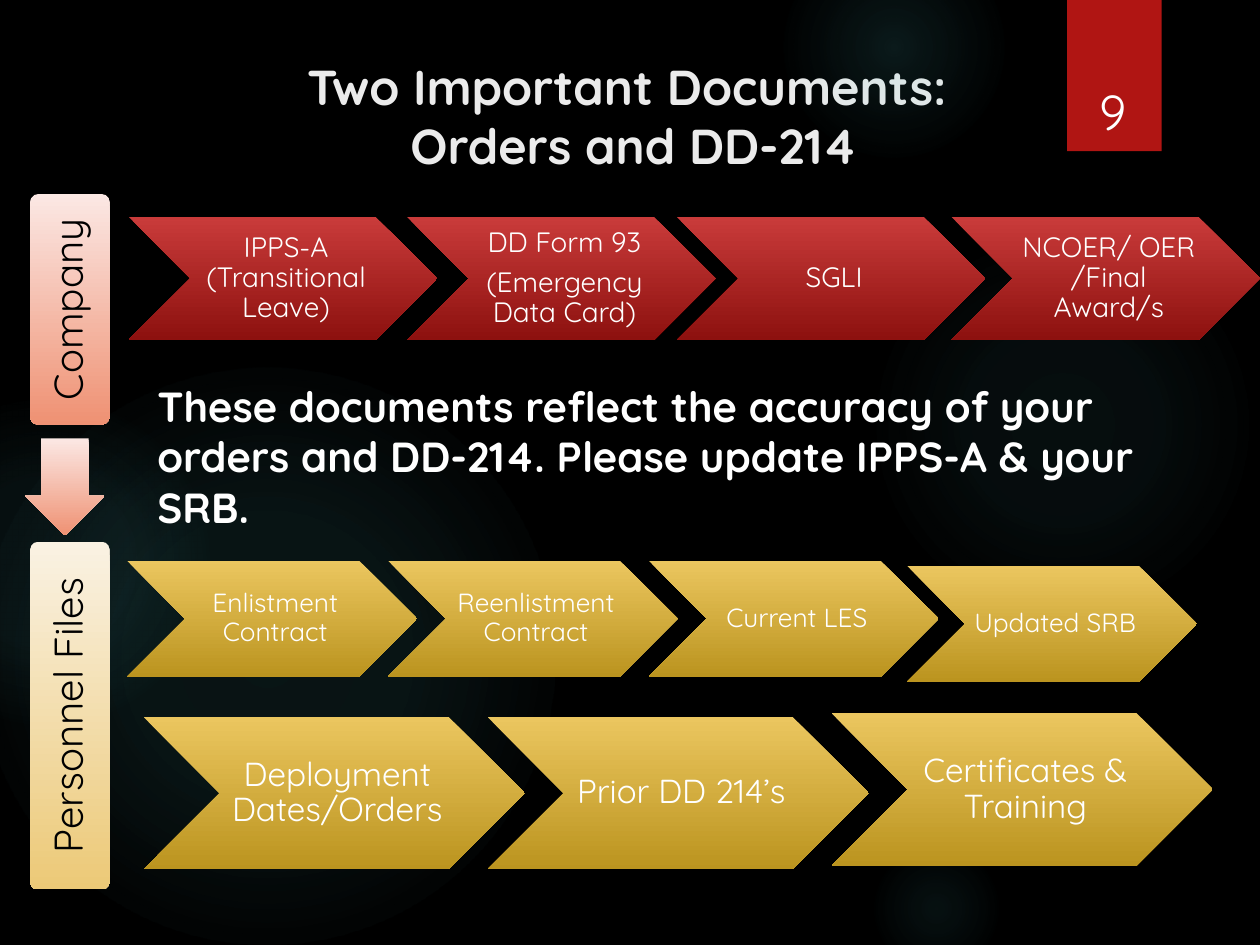
import dataclasses
import typing

import lxml.etree
import pptx
import pptx.dml.color
import pptx.enum.shapes
import pptx.enum.text
import pptx.oxml
import pptx.oxml.ns
import pptx.util

SHAPE = pptx.enum.shapes.MSO_SHAPE
ANCHOR = pptx.enum.text.MSO_ANCHOR
ALIGN = pptx.enum.text.PP_ALIGN

COLUMNS, ROWS = 100, 75
SLIDE_WIDTH, SLIDE_HEIGHT = pptx.util.Inches(10), pptx.util.Inches(7.5)
FONT = "Quicksand"
WHITE, BLACK = "FFFFFF", "000000"
GLOW = "50B9C1"
RED = ("C93B3A", "8D110F")
GOLD = ("EBC65F", "BB941F")
SALMON = ("FBE8E4", "EF9173")
SAND = ("FAF2E3", "ECC977")


@dataclasses.dataclass
class Place:
    column: float
    row: float
    columns: float
    rows: float

    def lengths(self) -> tuple[int, int, int, int]:
        return (across(self.column), down(self.row),
                across(self.columns), down(self.rows))


@dataclasses.dataclass
class Glow:
    column: float
    row: float
    size: float
    stops: tuple


@dataclasses.dataclass
class Step:
    column: float
    row: float
    lines: tuple


@dataclasses.dataclass
class Chain:
    height: float
    size: float
    shades: tuple
    steps: list


@dataclasses.dataclass
class Label:
    text: str
    row: float
    rows: float
    shades: tuple


GLOWS = [
    Glow(68.9, 18.3, 30.8, ((0, 7), (36, 6), (69, 0))),
    Glow(62.2, -5, 17.5, ((0, 14), (36, 7), (73, 0))),
    Glow(68.9, 66.7, 10.8, ((0, 9), (36, 5), (66, 0))),
    Glow(-1.7, 29.2, 45.8, ((0, 11), (36, 10), (75, 0))),
    Glow(-9.2, 31.7, 25.8, ((0, 8), (36, 8), (72, 0))),
]
CHAINS = [
    Chain(9.8, 16, RED, [
        Step(10.2, 17.2, ("IPPS-A (Transitional Leave)",)),
        Step(32.3, 17.2, ("DD Form 93", "(Emergency Data Card)")),
        Step(53.7, 17.2, ("SGLI",)),
        Step(75.5, 17.2, ("NCOER/ OER /Final Award/s",)),
    ]),
    Chain(9.2, 15, GOLD, [
        Step(10.1, 44.5, ("Enlistment Contract",)),
        Step(30.8, 44.5, ("Reenlistment Contract",)),
        Step(51.5, 44.5, ("Current LES",)),
        Step(72, 44.9, ("Updated SRB",)),
    ]),
    Chain(12.1, 19, GOLD, [
        Step(11.4, 56.9, ("Deployment Dates/Orders",)),
        Step(38.7, 56.9, ("Prior DD 214’s",)),
        Step(66, 56.6, ("Certificates & Training",)),
    ]),
]
LABELS = [
    Label("Company", 15.4, 18.3, SALMON),
    Label("Personnel Files", 43, 27.6, SAND),
]


def across(columns: float) -> int:
    return round(SLIDE_WIDTH * columns / COLUMNS)


def down(rows: float) -> int:
    return round(SLIDE_HEIGHT * rows / ROWS)


def color(value: str) -> pptx.dml.color.RGBColor:
    return pptx.dml.color.RGBColor.from_string(value)


def add_plain(page, kind, place: Place):
    shape = page.shapes.add_shape(kind, *place.lengths())
    shape.shadow.inherit = False
    shape.line.fill.background()
    return shape


def shade(shape, shades: tuple) -> None:
    shape.fill.gradient()
    shape.fill.gradient_angle = 270
    for stop, value in zip(shape.fill.gradient_stops, shades):
        stop.color.rgb = color(value)


def write(shape, lines: typing.Sequence[str], size: float, ink: str = WHITE,
          bold: bool = False, align=ALIGN.CENTER, anchor=ANCHOR.MIDDLE,
          spacing: float = 1, after: float = 0) -> None:
    frame = shape.text_frame
    frame.word_wrap = True
    frame.auto_size = pptx.enum.text.MSO_AUTO_SIZE.NONE
    frame.vertical_anchor = anchor
    frame.text = "\n".join(lines)
    for para in frame.paragraphs:
        para.alignment = align
        para.line_spacing = spacing
        para.space_after = pptx.util.Pt(size * after)
        para.font.name = FONT
        para.font.size = pptx.util.Pt(size)
        para.font.bold = bold
        para.font.color.rgb = color(ink)


def add_glow(page, glow: Glow) -> None:
    shape = add_plain(page, SHAPE.OVAL, Place(glow.column, glow.row, glow.size, glow.size))
    shape.fill.gradient()
    gradient = shape.fill._xPr.find(pptx.oxml.ns.qn("a:gradFill"))
    stops = "".join(
        f'<a:gs pos="{position * 1000}"><a:srgbClr val="{GLOW}">'
        f'<a:alpha val="{alpha * 1000}"/></a:srgbClr></a:gs>'
        for position, alpha in glow.stops)
    radial = pptx.oxml.parse_xml(
        f'<a:gradFill {pptx.oxml.ns.nsdecls("a")} rotWithShape="1">'
        f'<a:gsLst>{stops}</a:gsLst><a:path path="circle">'
        '<a:fillToRect l="50000" t="50000" r="50000" b="50000"/></a:path></a:gradFill>')
    gradient.getparent().replace(gradient, radial)


def add_chain(page, chain: Chain) -> None:
    for step in chain.steps:
        place = Place(step.column, step.row, chain.height * 2.5, chain.height)
        chevron = add_plain(page, SHAPE.CHEVRON, place)
        shade(chevron, chain.shades)
        write(chevron, step.lines, chain.size, spacing=0.9, after=0.35)
        frame = chevron.text_frame
        frame.margin_left = across(0.7)
        frame.margin_top = frame.margin_right = frame.margin_bottom = across(0.2)


def add_label(page, label: Label) -> None:
    box = add_plain(page, SHAPE.ROUNDED_RECTANGLE, Place(2.4, label.row, 6.3, label.rows))
    box.adjustments[0] = 0.1
    shade(box, label.shades)
    write(box, [label.text], 23, BLACK, spacing=0.9, after=0.35)
    frame = box.text_frame
    frame.margin_left = frame.margin_right = across(1)
    frame.margin_top = frame.margin_bottom = across(1)
    frame._txBody.bodyPr.set("vert", "vert270")


def main() -> None:
    deck = pptx.Presentation()
    deck.slide_width, deck.slide_height = SLIDE_WIDTH, SLIDE_HEIGHT
    page = deck.slides.add_slide(deck.slide_layouts[5])
    page.background.fill.solid()
    page.background.fill.fore_color.rgb = color(BLACK)

    for glow in GLOWS:
        add_glow(page, glow)
    ribbon = add_plain(page, SHAPE.RECTANGLE, Place(84.7, 0, 7.5, 12))
    ribbon.fill.solid()
    ribbon.fill.fore_color.rgb = color("B01513")

    title = page.shapes.title
    title.left, title.top, title.width, title.height = Place(3, 4, 94.6, 12.5).lengths()
    write(title, ["Two Important Documents: \vOrders and DD-214"], 28, "EBEBEB",
          bold=True, anchor=ANCHOR.TOP)
    number = page.shapes.add_textbox(*Place(84.9, 3.2, 6.9, 8.4).lengths())
    write(number, ["9"], 28, anchor=ANCHOR.BOTTOM)

    for chain in CHAINS:
        add_chain(page, chain)
    for label in LABELS:
        add_label(page, label)
    arrow = add_plain(page, SHAPE.DOWN_ARROW, Place(2, 34.8, 6.3, 7.7))
    arrow.adjustments[0] = 0.6
    shade(arrow, SALMON)

    advice = page.shapes.add_textbox(*Place(11.5, 29.7, 82.1, 13.1).lengths())
    write(advice, ["These documents reflect the accuracy of your orders and DD-214. "
                   "Please update IPPS-A & your SRB."], 24,
          bold=True, align=ALIGN.LEFT, anchor=ANCHOR.TOP)
    deck.save("out.pptx")


if __name__ == "__main__":
    main()
